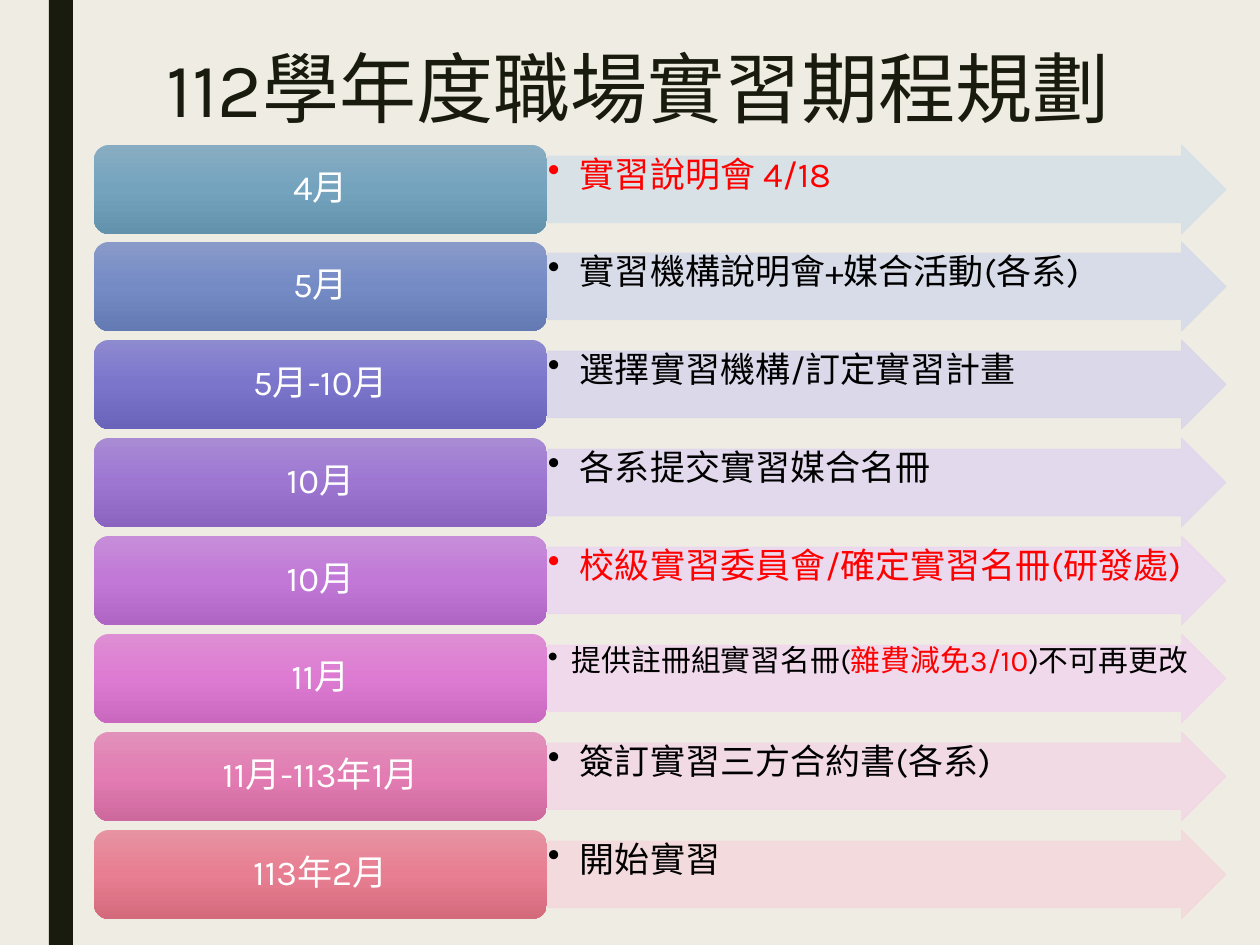
import pptx
import pptx.dml.color
import pptx.enum.shapes
import pptx.enum.text
import pptx.oxml
import pptx.oxml.ns
import pptx.util

SHAPES = pptx.enum.shapes.MSO_SHAPE
ANCHOR = pptx.enum.text.MSO_ANCHOR
ALIGN = pptx.enum.text.PP_ALIGN
NAMESPACE = pptx.oxml.ns.nsdecls("a")

PX_PER_INCH = 126
FONT = "Karla"
COLORS = {
    "background": "EFEDE3",
    "dark": "191B0E",
    "white": "FFFFFF",
    "black": "000000",
    "red": "FF0000",
}

# Row grid
FIRST_TOP, LAST_TOP = 145, 830
ROW_HEIGHT = 89
LABEL_LEFT, LABEL_WIDTH = 94, 453
ARROW_LEFT, ARROW_WIDTH = 547, 679
TASK_WIDTH, TASK_HEIGHT, TASK_OFFSET = 645, 67, 11

# Month, task runs, task size, bullet indent, arrow colour, label gradient
SCHEDULE = [
    ("4月", [("實習說明會 4/18", "red")], 20, 32,
     "D6E0E7", ("88ADC3", "74A3BE", "6392AD")),
    ("5月", [("實習機構說明會+媒合活動(各系)", "black")], 20, 32,
     "D6DBE9", ("899AC9", "748BC5", "637AB3")),
    ("5月-10月", [("選擇實習機構/訂定實習計畫", "black")], 20, 32,
     "D9D6EB", ("8E8ACF", "7B75CC", "6963B9")),
    ("10月", [("各系提交實習媒合名冊", "black")], 20, 32,
     "E1D7ED", ("A98BD4", "9D76D2", "8A64BF")),
    ("10月", [("校級實習委員會/確定實習名冊(研發處)", "red")], 20, 32,
     "EBD7EF", ("C78DD9", "C178D7", "AF65C4")),
    ("11月", [("提供註冊組實習名冊(", "black"), ("雜費減免3/10", "red"),
             (")不可再更改", "black")], 17, 24,
     "F1D7EC", ("DE8FD4", "DD7AD1", "CA67BE")),
    ("11月-113年1月", [("簽訂實習三方合約書(各系)", "black")], 20, 32,
     "F2D8E5", ("E291BB", "E27CB2", "CE699E")),
    ("113年2月", [("開始實習", "black")], 20, 32,
     "F4D9DC", ("E793A2", "E77E91", "D36B7D")),
]


def px(length):
    return pptx.util.Emu(length * 914400 // PX_PER_INCH)


def rgb(value):
    return pptx.dml.color.RGBColor.from_string(value)


def add_shape(slide, kind, left, top, width, height):
    shape = slide.shapes.add_shape(kind, px(left), px(top), px(width), px(height))
    shape.shadow.inherit = False
    shape.line.fill.background()
    return shape


def fill_solid(shape, color, opacity=100):
    shape.fill.solid()
    shape.fill.fore_color.rgb = rgb(color)
    if opacity < 100:
        color_element = shape.fill._xPr.find(".//" + pptx.oxml.ns.qn("a:srgbClr"))
        color_element.append(pptx.oxml.parse_xml(
            f'<a:alpha {NAMESPACE} val="{opacity * 1000}"/>'))


def fill_gradient(shape, colors):
    """Spread the colours evenly from top to bottom."""
    shape.fill.gradient()
    gradient = shape.fill._xPr.find(pptx.oxml.ns.qn("a:gradFill"))
    step = 100000 // (len(colors) - 1)
    stops = "".join(
        f'<a:gs pos="{index * step}"><a:srgbClr val="{color}"/></a:gs>'
        for index, color in enumerate(colors))
    gradient.getparent().replace(gradient, pptx.oxml.parse_xml(
        f'<a:gradFill {NAMESPACE} rotWithShape="1"><a:gsLst>{stops}</a:gsLst>'
        '<a:lin ang="5400000" scaled="0"/></a:gradFill>'))


def write_text(shape, runs, size, insets, anchor=ANCHOR.TOP, align=ALIGN.LEFT):
    frame = shape.text_frame
    frame.word_wrap = True
    frame.vertical_anchor = anchor
    frame.margin_left = frame.margin_right = px(insets[0])
    frame.margin_top = frame.margin_bottom = px(insets[1])
    paragraph = frame.paragraphs[0]
    paragraph.alignment = align
    paragraph.line_spacing = 0.9
    for text, color in runs:
        run = paragraph.add_run()
        run.text = text
        run.font.name = FONT
        run.font.size = pptx.util.Pt(size)
        run.font.color.rgb = rgb(COLORS[color])
    return paragraph


def add_text(slide, left, top, width, height, runs, size, insets):
    box = slide.shapes.add_textbox(px(left), px(top), px(width), px(height))
    return write_text(box, runs, size, insets)


def add_bullet(paragraph, indent):
    properties = paragraph._p.get_or_add_pPr()
    properties.set("marL", str(px(indent)))
    properties.set("indent", str(-px(indent)))
    properties.append(pptx.oxml.parse_xml(f'<a:buChar {NAMESPACE} char="•"/>'))


def add_row(slide, top, month, runs, size, indent, arrow_color, label_colors):
    # Arrow band
    arrow = add_shape(slide, SHAPES.RIGHT_ARROW,
                      ARROW_LEFT, top, ARROW_WIDTH, ROW_HEIGHT)
    arrow.adjustments[0] = 0.75
    arrow.adjustments[1] = 0.5
    fill_solid(arrow, arrow_color, 90)
    fill_solid(arrow.line, arrow_color, 90)
    arrow.line.width = pptx.util.Pt(0.5)

    # Task
    paragraph = add_text(slide, ARROW_LEFT, top + TASK_OFFSET, TASK_WIDTH,
                         TASK_HEIGHT, runs, size, (1, 1))
    add_bullet(paragraph, indent)

    # Month label
    label = add_shape(slide, SHAPES.ROUNDED_RECTANGLE,
                      LABEL_LEFT, top, LABEL_WIDTH, ROW_HEIGHT)
    fill_gradient(label, label_colors)
    write_text(label, [(month, "white")], 20, (10, 5), ANCHOR.MIDDLE, ALIGN.CENTER)


def main():
    presentation = pptx.Presentation()
    presentation.slide_width = px(1260)
    presentation.slide_height = px(945)
    slide = presentation.slides.add_slide(presentation.slide_layouts[6])
    slide.background.fill.solid()
    slide.background.fill.fore_color.rgb = rgb(COLORS["background"])

    # Side bar and title
    side_bar = add_shape(slide, SHAPES.RECTANGLE, 49, 0, 24, 945)
    fill_solid(side_bar, COLORS["dark"])
    add_text(slide, 154, 45, 1081, 204,
             [("112學年度職場實習期程規劃", "dark")], 44, (13, 6))

    # Schedule rows at equal steps
    for index, row in enumerate(SCHEDULE):
        top = FIRST_TOP + index * (LAST_TOP - FIRST_TOP) // (len(SCHEDULE) - 1)
        add_row(slide, top, *row)

    presentation.save("out.pptx")


if __name__ == "__main__":
    main()
